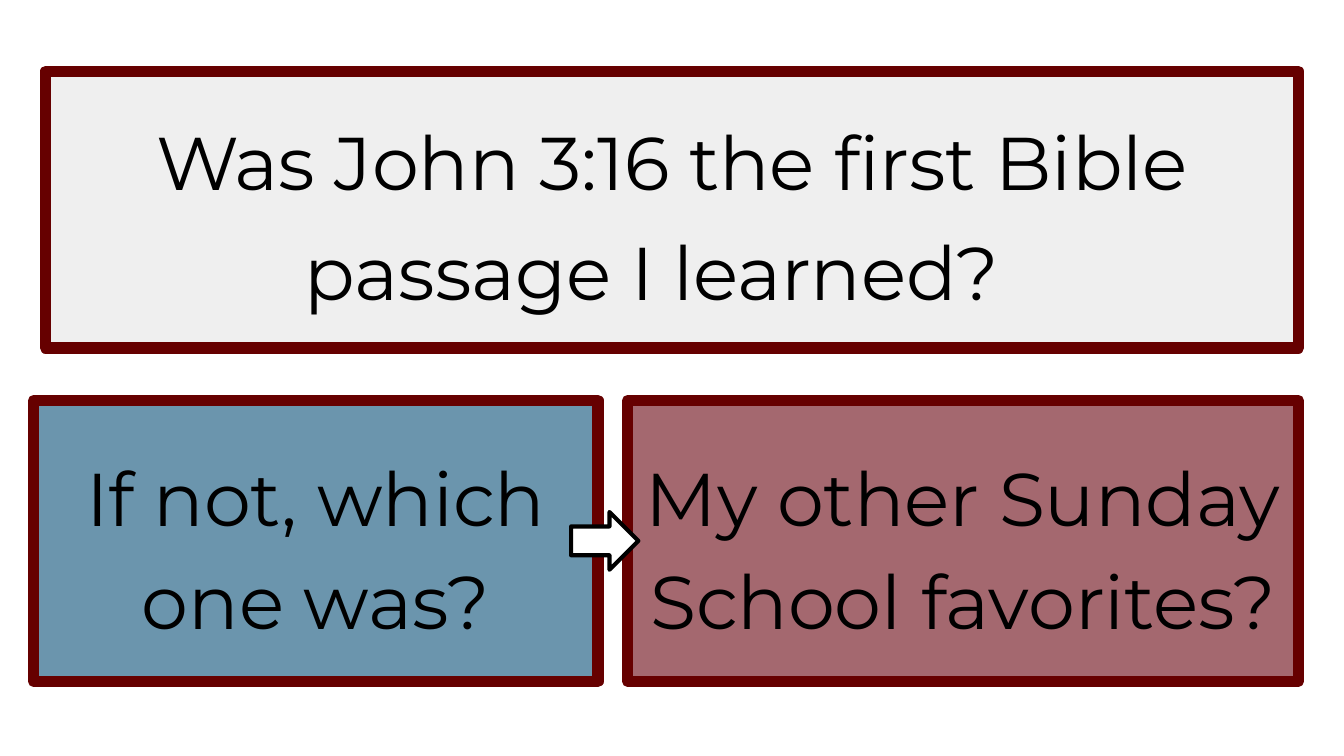
from dataclasses import dataclass

from lxml import etree
from pptx import Presentation
from pptx.dml.color import RGBColor
from pptx.enum import shapes, text
from pptx.oxml import ns
from pptx.util import Inches, Pt

BLACK = RGBColor(0x00, 0x00, 0x00)
WHITE = RGBColor(0xFF, 0xFF, 0xFF)
MAROON = RGBColor(0x66, 0x00, 0x00)
PALE_GREY = RGBColor(0xEF, 0xEF, 0xEF)
BLUE = RGBColor(0x6B, 0x95, 0xAD)
ROSE = RGBColor(0xA4, 0x68, 0x6F)

SLIDE_WIDTH = 10
SLIDE_HEIGHT = SLIDE_WIDTH * 9 / 16
RIGHT_EDGE = 9.66
ANSWER_TOP = 2.98
ANSWER_HEIGHT = 2.09
FRAME_FORMAT = {
    "word_wrap": True,
    "vertical_anchor": text.MSO_ANCHOR.MIDDLE,
    **{f"margin_{side}": Inches(0.1) for side in ("left", "top", "right", "bottom")},
}
PARAGRAPH_FORMAT = {
    "alignment": text.PP_ALIGN.CENTER,
    "line_spacing": 1.15,
    "space_after": Pt(12),
}


@dataclass(frozen=True)
class Box:
    left: float
    top: float
    width: float
    height: float
    fill: RGBColor


@dataclass(frozen=True)
class Question:
    box: Box
    runs: tuple[tuple[str, int], ...]


QUESTIONS = (
    Question(Box(0.34, 0.53, RIGHT_EDGE - 0.34, 2.06, PALE_GREY),
             (("Was John 3:16 the first Bible passage I learned? ", 40), (" ", 43))),
    Question(Box(0.25, ANSWER_TOP, 4.2, ANSWER_HEIGHT, BLUE),
             (("If not, which one was?", 40),)),
    Question(Box(4.67, ANSWER_TOP, RIGHT_EDGE - 4.67, ANSWER_HEIGHT, ROSE),
             (("My other Sunday School favorites? ", 40),)),
)
ARROW = Box(4.25, 3.81, 0.5, 0.43, WHITE)


def apply_format(target, values: dict) -> None:
    for attribute, value in values.items():
        setattr(target, attribute, value)


def add_outlined(slide, kind, box: Box, line_color: RGBColor, line_width: float):
    """Add a filled shape whose outline has rounded joins."""
    shape = slide.shapes.add_shape(
        kind, *(Inches(n) for n in (box.left, box.top, box.width, box.height)))
    shape.shadow.inherit = False
    shape.fill.solid()
    shape.fill.fore_color.rgb = box.fill
    shape.line.color.rgb = line_color
    shape.line.width = Pt(line_width)
    outline = shape.line.fill._xPr
    etree.SubElement(outline, ns.qn("a:round"))
    return shape


def add_question(slide, question: Question) -> None:
    panel = add_outlined(
        slide, shapes.MSO_SHAPE.RECTANGLE, question.box, MAROON, 6)
    frame = panel.text_frame
    apply_format(frame, FRAME_FORMAT)
    paragraph = frame.paragraphs[0]
    apply_format(paragraph, PARAGRAPH_FORMAT)
    for words, size in question.runs:
        run = paragraph.add_run()
        run.text = words
        apply_format(run.font, {"name": "Montserrat", "size": Pt(size)})
        run.font.color.rgb = BLACK


def main() -> None:
    deck = Presentation()
    deck.slide_width, deck.slide_height = Inches(SLIDE_WIDTH), Inches(SLIDE_HEIGHT)
    slide = deck.slides.add_slide(deck.slide_layouts[6])
    for question in QUESTIONS:
        add_question(slide, question)
    add_outlined(slide, shapes.MSO_SHAPE.RIGHT_ARROW, ARROW, BLACK, 2.25)
    deck.save("out.pptx")


if __name__ == "__main__":
    main()
